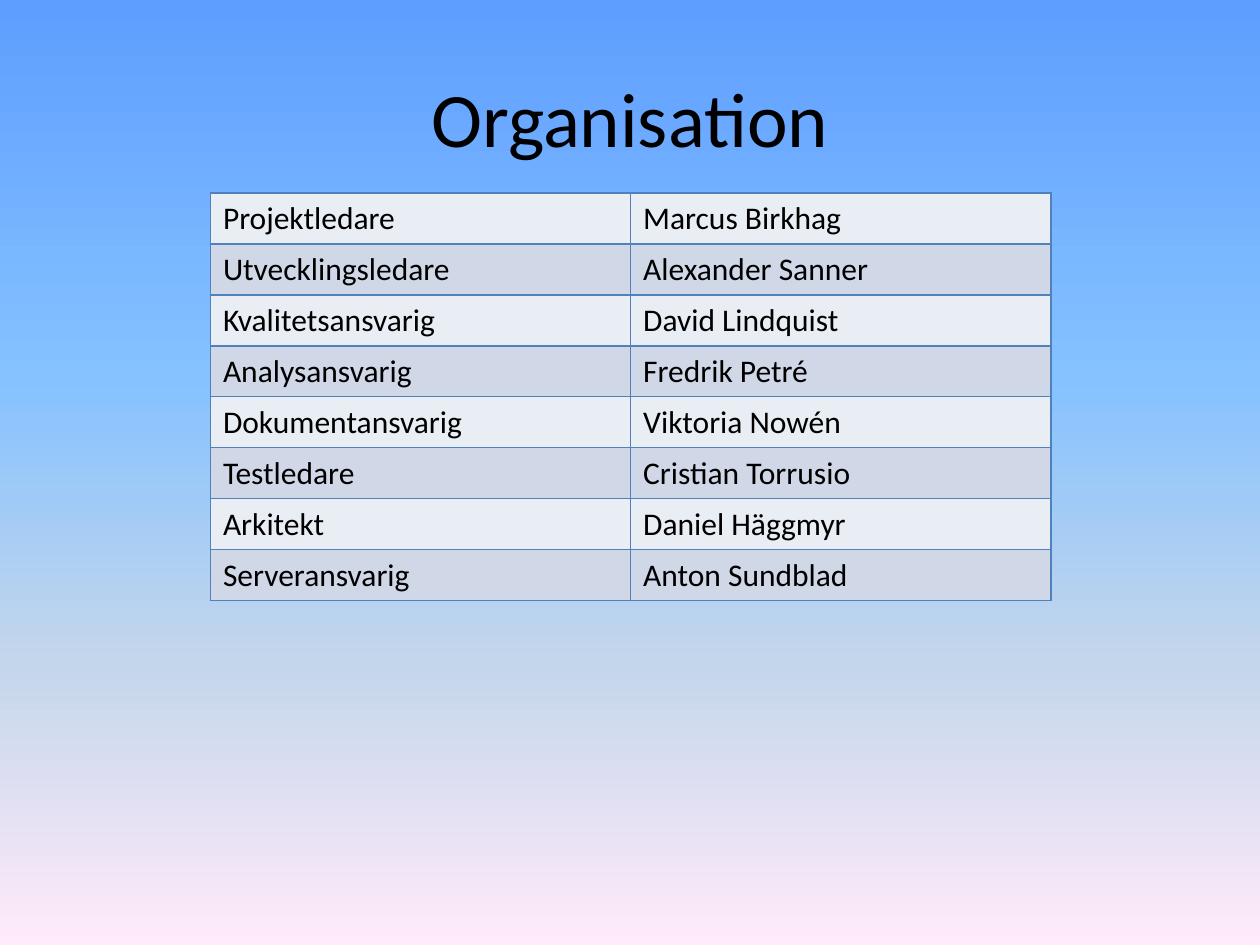
"""Build the Organisation slide with its table of roles and people."""
from lxml import etree
from pptx import Presentation
from pptx.dml.color import RGBColor
from pptx.enum import text
from pptx.oxml import ns
from pptx.util import Inches, Pt

COLORS = {"text": "000000", "border": "4F81BD", "odd": "E9EDF4", "even": "D0D8E8"}
GRADIENT = {0: "5E9EFF", 40: "85C2FF", 70: "C4D6EB", 100: "FFEBFA"}
ROLES = [
    ("Projektledare", "Marcus Birkhag"),
    ("Utvecklingsledare", "Alexander Sanner"),
    ("Kvalitetsansvarig", "David Lindquist"),
    ("Analysansvarig", "Fredrik Petré"),
    ("Dokumentansvarig", "Viktoria Nowén"),
    ("Testledare", "Cristian Torrusio"),
    ("Arkitekt", "Daniel Häggmyr"),
    ("Serveransvarig", "Anton Sundblad"),
]


def write(paragraph, wording, size):
    run = paragraph.add_run()
    run.text = wording
    for name, value in {"name": "Calibri", "size": Pt(size)}.items():
        setattr(run.font, name, value)
    run.font.color.rgb = RGBColor.from_string(COLORS["text"])


def add_border(cell, side):
    line = etree.SubElement(cell._tc.get_or_add_tcPr(), ns.qn(f"a:{side}"), w=str(Pt(1)))
    fill = etree.SubElement(line, ns.qn("a:solidFill"))
    etree.SubElement(fill, ns.qn("a:srgbClr"), val=COLORS["border"])


presentation = Presentation()
presentation.slide_width = Inches(10)
presentation.slide_height = Inches(7.5)
slide = presentation.slides.add_slide(presentation.slide_layouts[6])

background = slide.background.fill
background.gradient()
background.gradient_angle = 270
stops = slide.element.find(".//" + ns.qn("a:gsLst"))
for stop in list(stops):
    stops.remove(stop)
for position, color in GRADIENT.items():
    stop = etree.SubElement(stops, ns.qn("a:gs"), pos=str(position * 1000))
    etree.SubElement(stop, ns.qn("a:srgbClr"), val=color)

title = slide.shapes.add_textbox(Inches(0.5), Inches(0.3), Inches(9), Inches(1.25))
title_format = {"word_wrap": True, "vertical_anchor": text.MSO_ANCHOR.MIDDLE}
for name, value in title_format.items():
    setattr(title.text_frame, name, value)
paragraph = title.text_frame.paragraphs[0]
paragraph.alignment = text.PP_ALIGN.CENTER
write(paragraph, "Organisation", 44)

table = slide.shapes.add_table(
    len(ROLES), 2, Inches(1.67), Inches(1.53), Inches(6.67), Inches(3.24)
).table
table.first_row = False
for row, entries in enumerate(ROLES):
    for column, wording in enumerate(entries):
        cell = table.cell(row, column)
        write(cell.text_frame.paragraphs[0], wording, 18)
        for side in ("lnL", "lnR", "lnT", "lnB"):
            add_border(cell, side)
        cell.fill.solid()
        cell.fill.fore_color.rgb = RGBColor.from_string(COLORS["even" if row % 2 else "odd"])

presentation.save("out.pptx")
